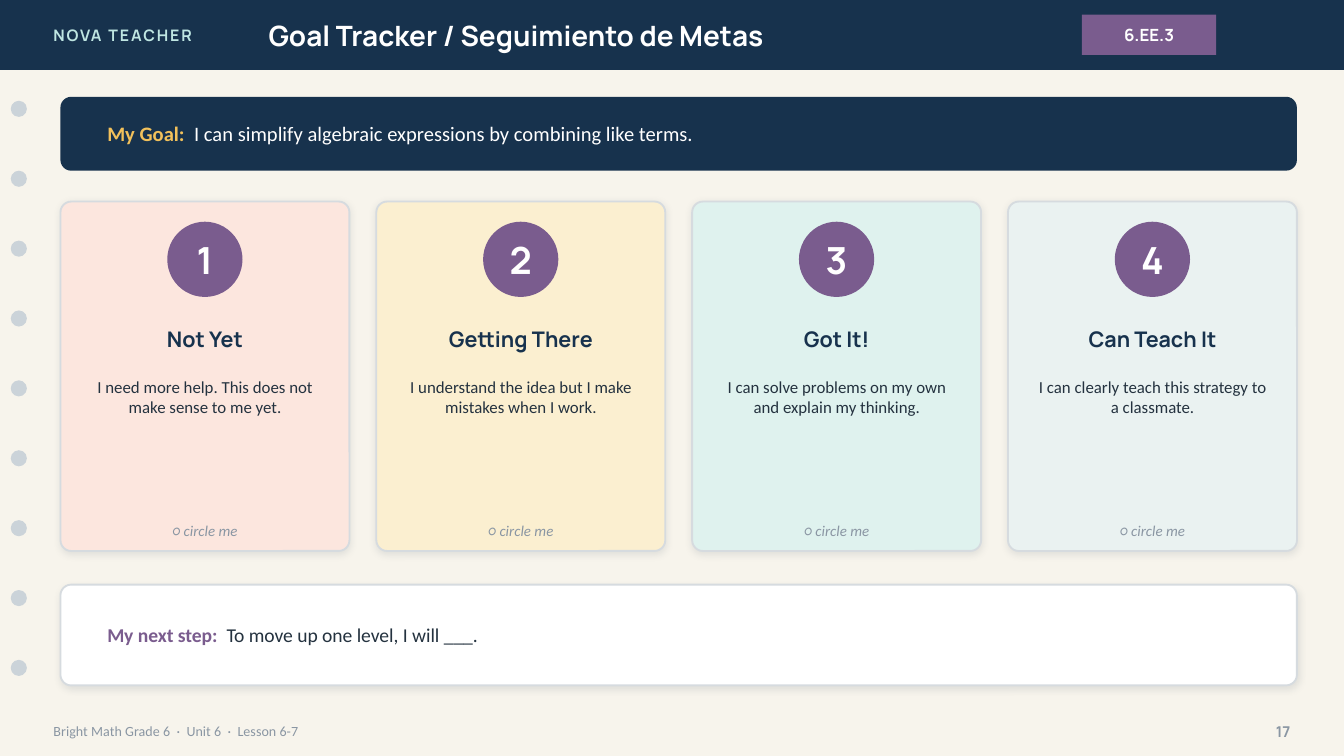
from lxml.etree import SubElement
from pptx import Presentation
from pptx.dml.color import RGBColor
from pptx.enum.shapes import MSO_SHAPE
from pptx.enum.text import MSO_ANCHOR, PP_ALIGN
from pptx.oxml.ns import qn
from pptx.util import Pt

NAVY, PURPLE, WHITE = "17324D", "7A5C8E", "FFFFFF"
GRAY, INK, EDGE = "8A96A3", "24323F", "D6DBDF"
HEAD, BODY = "Manrope", "Calibri"
LEFT, WIDE = 32.4, 662.4
CARDS = [
    ("Not Yet", "I need more help. This does not make sense to me yet.", "FCE6DE"),
    ("Getting There", "I understand the idea but I make mistakes when I work.", "FBEFD0"),
    ("Got It!", "I can solve problems on my own and explain my thinking.", "DFF2EE"),
    ("Can Teach It", "I can clearly teach this strategy to a classmate.", "EAF2F1"),
]


def color(code):
    return RGBColor.from_string(code)


def add_shape(slide, kind, box, fill):
    shape = slide.shapes.add_shape(kind, *map(Pt, box))
    shape.shadow.inherit = False
    shape.fill.solid()
    shape.fill.fore_color.rgb = color(fill)
    shape.line.fill.background()
    return shape


def add_panel(slide, box, fill, raised=True):
    """Rounded box; a raised one has an edge and a soft shadow."""
    panel = add_shape(slide, MSO_SHAPE.ROUNDED_RECTANGLE, box, fill)
    panel.adjustments[0] = 5.76 / min(box[2:])
    if raised:
        panel.line.color.rgb = color(EDGE)
        panel.line.width = Pt(1)
        effects = panel._element.spPr.find(qn("a:effectLst"))
        shadow = SubElement(effects, qn("a:outerShdw"), blurRad=str(Pt(4)),
                            dist=str(Pt(1)), dir="5400000", algn="ctr", rotWithShape="0")
        tint = SubElement(shadow, qn("a:srgbClr"), val="1C2E42")
        SubElement(tint, qn("a:alpha"), val="10000")
    return panel


def write(shape, runs, size, name, align=PP_ALIGN.LEFT, anchor=MSO_ANCHOR.MIDDLE):
    """Fill a shape with runs given as (text, colour, style), style being '', 'b' or 'i'."""
    frame = shape.text_frame
    frame.word_wrap = True
    frame.vertical_anchor = anchor
    line = frame.paragraphs[0]
    line.alignment = align
    for text, code, style in runs:
        run = line.add_run()
        run.text = text
        font = run.font
        font.name, font.size = name, Pt(size)
        font.bold, font.italic = style == "b", style == "i"
        font.color.rgb = color(code)


def add_text(slide, box, *args, **options):
    label = slide.shapes.add_textbox(*map(Pt, box))
    write(label, *args, **options)
    return label


def add_header(slide, box):
    left, top, width, height = box
    add_shape(slide, MSO_SHAPE.RECTANGLE, box, NAVY)
    brand = add_text(slide, (left + 21.6, top, 172.8, height),
                     [("NOVA TEACHER", "BFE6E2", "b")], 8.5, HEAD)
    brand.text_frame.paragraphs[0].runs[0].font._element.set("spc", "100")
    add_text(slide, (left + 136.8, top, 403.2, height),
             [("Goal Tracker / Seguimiento de Metas", WHITE, "b")], 15, HEAD)
    badge = add_shape(slide, MSO_SHAPE.RECTANGLE,
                      (left + 579.6, top + 7.92, 72, 21.6), PURPLE)
    write(badge, [("6.EE.3", WHITE, "b")], 9, HEAD, PP_ALIGN.CENTER)


def add_holes(slide, left, top, count=9, step=37.44, size=8.64):
    for i in range(count):
        add_shape(slide, MSO_SHAPE.OVAL, (left, top + i * step, size, size), "CBD3D9")


def add_footer(slide, box):
    left, top, width, height = box
    add_text(slide, (left, top, 504, height),
             [("Bright Math Grade 6  ·  Unit 6  ·  Lesson 6-7", GRAY, "")], 7.5, BODY)
    add_text(slide, (left + width - 36, top, 36, height),
             [("17", GRAY, "b")], 8, HEAD, PP_ALIGN.RIGHT)


def add_banner(slide, box, fill, runs, size, raised):
    left, top, width, height = box
    add_panel(slide, box, fill, raised)
    add_text(slide, (left + 18, top, width - 36, height), runs, size, BODY)


def add_card(slide, box, level, title, detail, fill):
    left, top, width, height = box
    add_panel(slide, box, fill)
    disc = (left + (width - 40.32) / 2, top + 10.8, 40.32, 40.32)
    add_shape(slide, MSO_SHAPE.OVAL, disc, PURPLE)
    add_text(slide, disc, [(str(level), WHITE, "b")], 20, HEAD, PP_ALIGN.CENTER)
    add_text(slide, (left + 3.6, top + 61.2, width - 7.2, 25.2),
             [(title, NAVY, "b")], 11.5, HEAD, PP_ALIGN.CENTER)
    add_text(slide, (left + 8.64, top + 90, width - 17.28, 82.8),
             [(detail, INK, "")], 9, BODY, PP_ALIGN.CENTER, MSO_ANCHOR.TOP)
    add_text(slide, (left + 3.6, top + height - 18, width - 7.2, 14.4),
             [("○ circle me", GRAY, "i")], 8, BODY, PP_ALIGN.CENTER)


def add_cards(slide, box, gap=14.4):
    left, top, width, height = box
    span = (width - gap * (len(CARDS) - 1)) / len(CARDS)
    for i, card in enumerate(CARDS):
        add_card(slide, (left + i * (span + gap), top, span, height), i + 1, *card)


def main():
    deck = Presentation()
    deck.slide_width, deck.slide_height = Pt(720), Pt(405)
    slide = deck.slides.add_slide(deck.slide_layouts[6])
    slide.background.fill.solid()
    slide.background.fill.fore_color.rgb = color("F7F4EC")
    add_header(slide, (0, 0, 720, 37.44))
    add_holes(slide, 5.76, 54)
    add_footer(slide, (21.6, 381.6, 676.8, 20.16))
    add_banner(slide, (LEFT, 51.84, WIDE, 39.6), NAVY, [
        ("My Goal:  ", "F2C15B", "b"),
        ("I can simplify algebraic expressions by combining like terms.", WHITE, ""),
    ], 11, raised=False)
    add_cards(slide, (LEFT, 108, WIDE, 187.2))
    add_banner(slide, (LEFT, 313.2, WIDE, 54), WHITE, [
        ("My next step:  ", PURPLE, "b"),
        ("To move up one level, I will ___.", INK, ""),
    ], 10.5, raised=True)
    deck.save("out.pptx")


if __name__ == "__main__":
    main()
